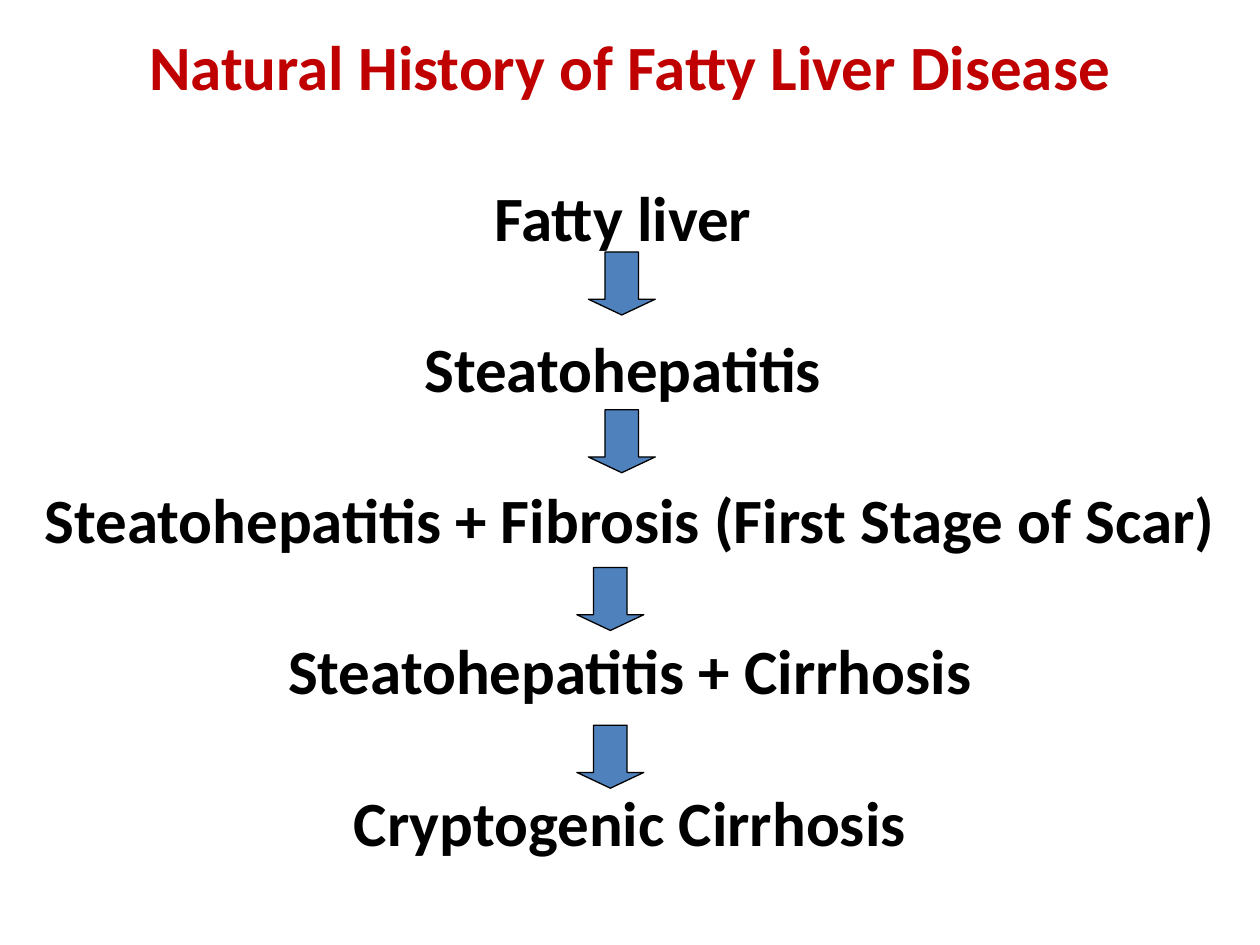
from dataclasses import dataclass

from pptx import Presentation
from pptx.dml.color import RGBColor
from pptx.enum.shapes import MSO_SHAPE
from pptx.enum.text import MSO_ANCHOR, PP_ALIGN
from pptx.util import Cm, Pt


@dataclass(frozen=True)
class Theme:
    font: str = "Calibri"
    heading: RGBColor = RGBColor(0xC0, 0x00, 0x00)
    ink: RGBColor = RGBColor(0x00, 0x00, 0x00)
    arrow: RGBColor = RGBColor(0x4F, 0x81, 0xBD)
    size: Pt = Pt(36)
    line_height: Pt = Pt(43.2)
    outline: Pt = Pt(0.75)


theme = Theme()


def write(text, *, paragraph, color=theme.ink, gap=theme.line_height):
    paragraph.alignment = PP_ALIGN.CENTER
    paragraph.line_spacing = theme.line_height
    paragraph.space_before = gap
    words = paragraph.add_run()
    words.text = text
    words.font.name = theme.font
    words.font.size = theme.size
    words.font.bold = True
    words.font.color.rgb = color


presentation = Presentation()
presentation.slide_width = Cm(25.4)
presentation.slide_height = Cm(19.05)
slide = presentation.slides.add_slide(presentation.slide_layouts[6])

progression = slide.shapes.add_textbox(0, 0, Cm(25.4), Cm(17.86)).text_frame
progression.word_wrap = True
progression.vertical_anchor = MSO_ANCHOR.MIDDLE

write(
    "Natural History of Fatty Liver Disease",
    paragraph=progression.paragraphs[0],
    color=theme.heading,
    gap=Pt(0),
)
stages = [
    "Fatty liver ",
    "Steatohepatitis ",
    "Steatohepatitis + Fibrosis (First Stage of Scar)",
    "Steatohepatitis + Cirrhosis",
    "Cryptogenic Cirrhosis",
]
for stage in stages:
    write(stage, paragraph=progression.add_paragraph())

for step, left in enumerate([11.86, 11.86, 11.63, 11.63]):
    arrow = slide.shapes.add_shape(
        MSO_SHAPE.DOWN_ARROW, Cm(left), Cm(5.08 + 3.18 * step), Cm(1.35), Cm(1.27)
    )
    arrow.adjustments[0] = 0.5
    arrow.adjustments[1] = 0.25
    arrow.shadow.inherit = False
    arrow.fill.solid()
    arrow.fill.fore_color.rgb = theme.arrow
    arrow.line.color.rgb = theme.ink
    arrow.line.width = theme.outline

presentation.save("out.pptx")
